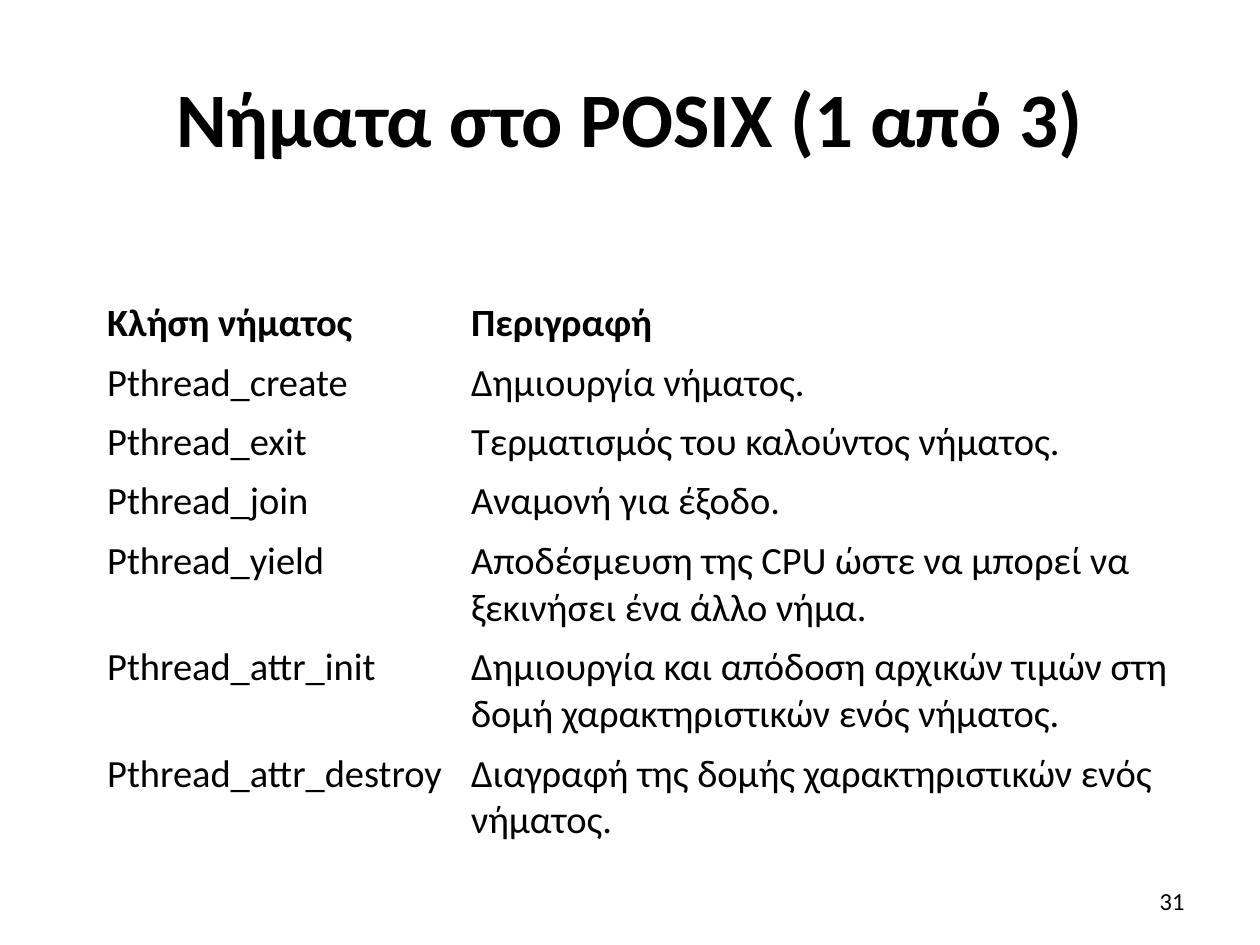
from pptx import Presentation
from pptx.dml.color import RGBColor
from pptx.enum.text import MSO_ANCHOR, PP_ALIGN
from pptx.util import Pt

MIDDLE = MSO_ANCHOR.MIDDLE
LEFT, CENTER, RIGHT = PP_ALIGN.LEFT, PP_ALIGN.CENTER, PP_ALIGN.RIGHT


def color(value):
    return RGBColor.from_string(value)


def write(frame, text, size, align, bold=False):
    frame.word_wrap = True
    paragraph = frame.paragraphs[0]
    paragraph.alignment = align
    run = paragraph.add_run()
    run.text = text
    for name, value in {"name": "Calibri", "size": Pt(size), "bold": bold}.items():
        setattr(run.font, name, value)
    run.font.color.rgb = color("000000")


prs = Presentation()
prs.slide_width, prs.slide_height = Pt(720), Pt(540)
slide = prs.slides.add_slide(prs.slide_layouts[5])

title = slide.shapes.title
title_box = {"left": Pt(36), "top": Pt(21.6), "width": Pt(648), "height": Pt(90)}
for name, value in title_box.items():
    setattr(title, name, value)
title.text_frame.vertical_anchor = MIDDLE
write(title.text_frame, "Νήματα στο POSIX (1 από 3)", 44, CENTER, True)

thread_calls = [
    ("Κλήση νήματος", "Περιγραφή"),
    ("Pthread_create", "Δημιουργία νήματος."),
    ("Pthread_exit", "Τερματισμός του καλούντος νήματος."),
    ("Pthread_join", "Αναμονή για έξοδο."),
    ("Pthread_yield", "Αποδέσμευση της CPU ώστε να μπορεί να ξεκινήσει ένα άλλο νήμα."),
    ("Pthread_attr_init", "Δημιουργία και απόδοση αρχικών τιμών στη δομή χαρακτηριστικών ενός νήματος."),
    ("Pthread_attr_destroy", "Διαγραφή της δομής χαρακτηριστικών ενός νήματος."),
]
column_widths = [208, 417.6]
row_height = 29.5
calls_table = slide.shapes.add_table(
    len(thread_calls), len(column_widths), Pt(54), Pt(167.8),
    Pt(sum(column_widths)), Pt(row_height * len(thread_calls))).table
calls_table.horz_banding = False
calls_table.first_row = False
for column, width in zip(calls_table.columns, column_widths):
    column.width = Pt(width)
for row, call in enumerate(thread_calls):
    for col, text in enumerate(call):
        cell = calls_table.cell(row, col)
        cell.fill.background()
        write(cell.text_frame, text, 22, LEFT, row == 0)

page_number = slide.shapes.add_textbox(Pt(516), Pt(500.4), Pt(168), Pt(28.8)).text_frame
page_number.vertical_anchor = MIDDLE
write(page_number, "31", 14, RIGHT)

prs.save("out.pptx")
